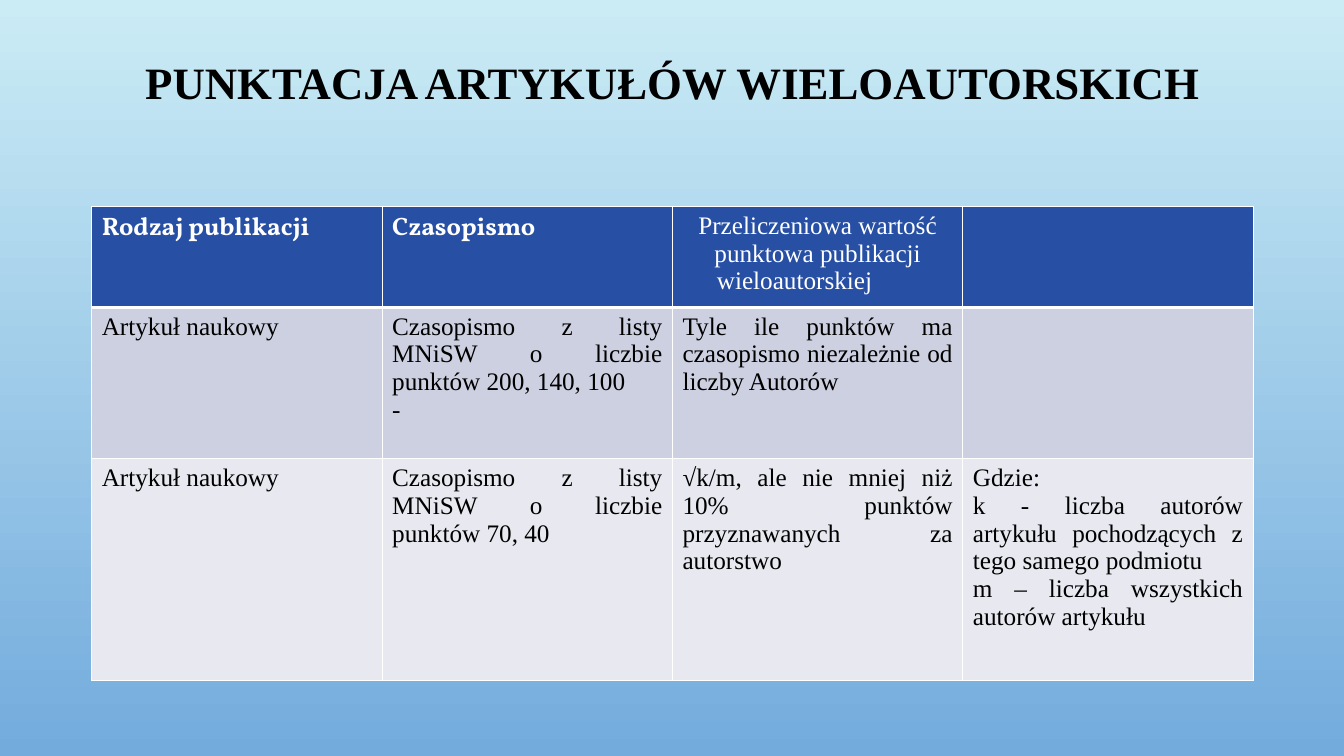
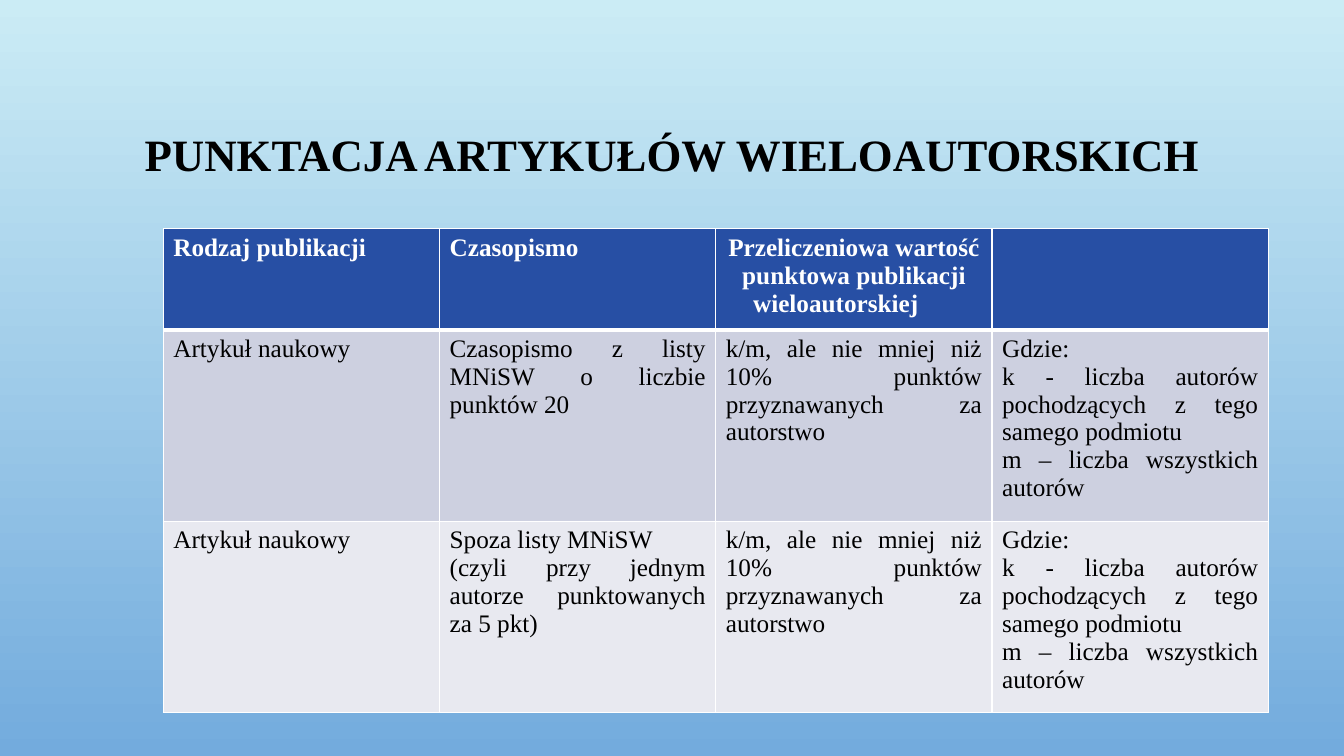
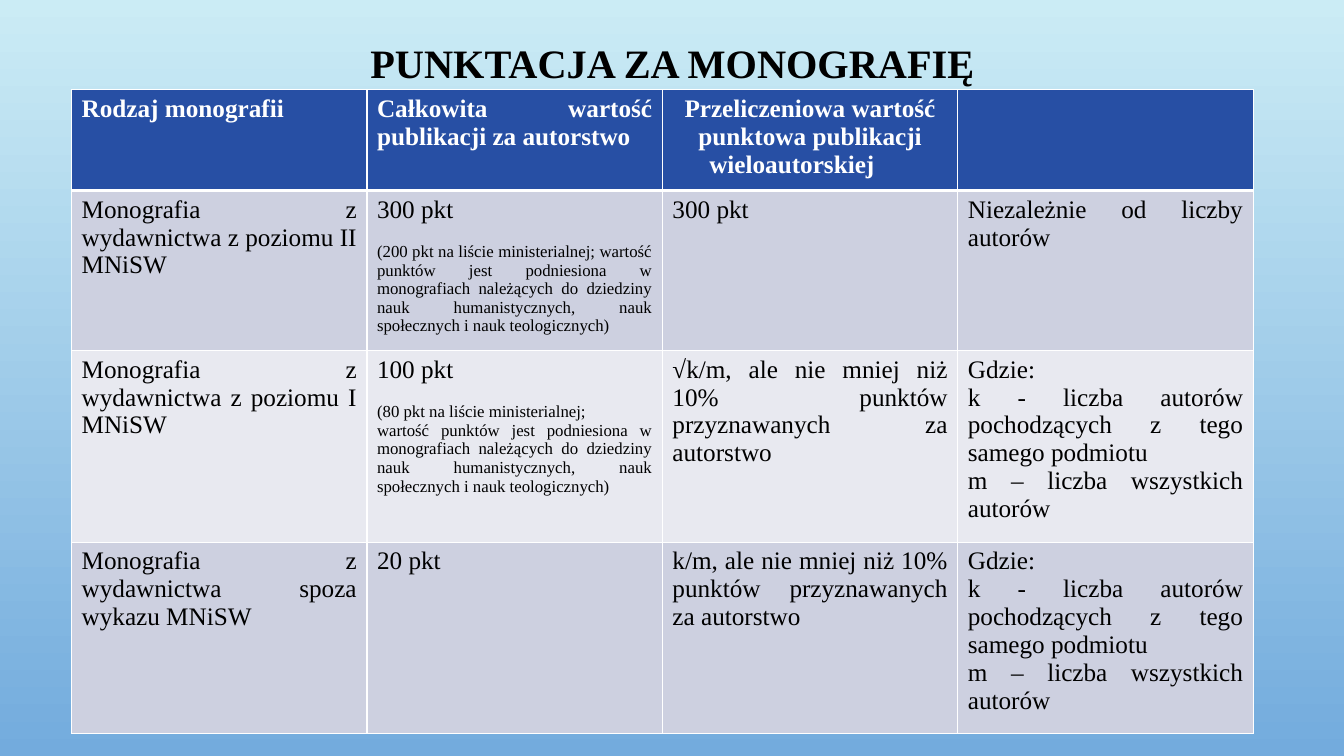
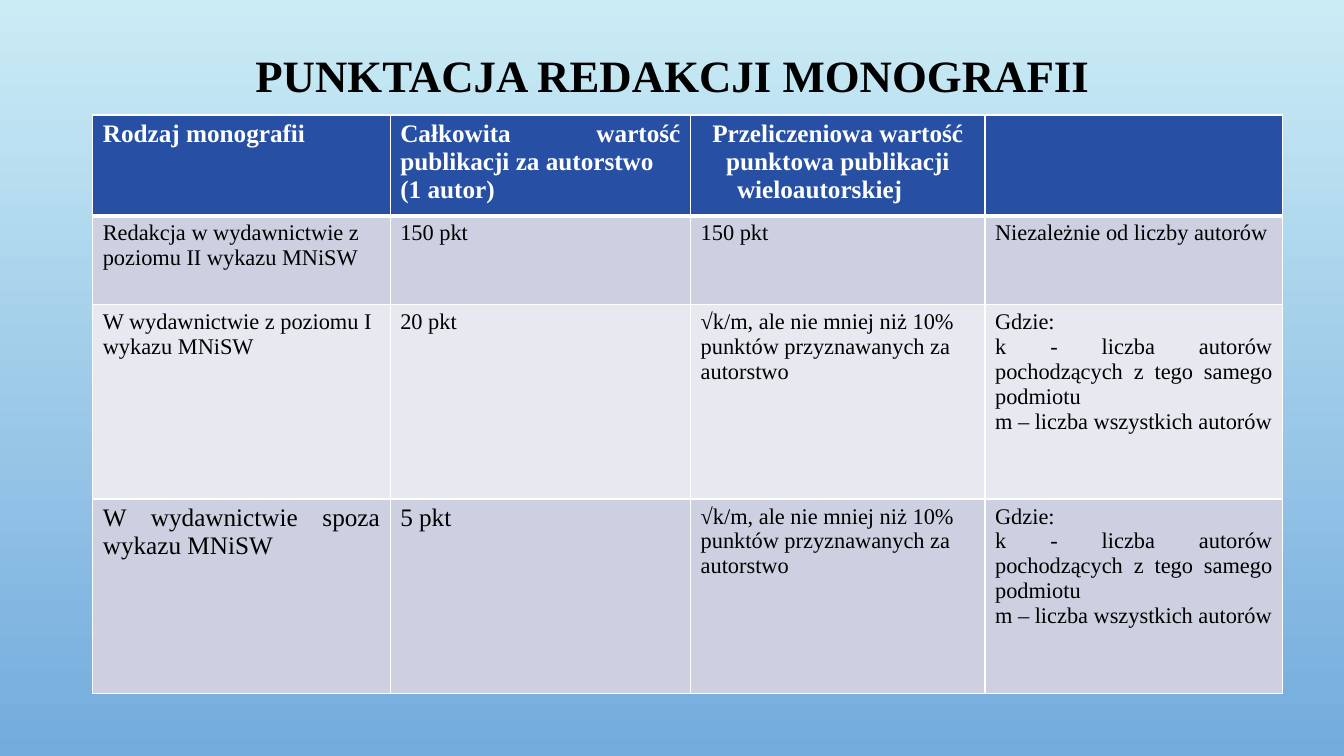
from dataclasses import dataclass

from lxml.etree import SubElement
from pptx import Presentation
from pptx.dml.color import RGBColor
from pptx.enum.text import MSO_ANCHOR, PP_ALIGN
from pptx.oxml.ns import qn
from pptx.util import Inches, Pt

SERIF = "Times New Roman"
BLACK, WHITE = "000000", "FFFFFF"
SKY_TOP, SKY_BOTTOM = "CBECF5", "73ABDD"
HEADER_FILL = "274FA4"
BAND_FILLS = ("CDD0E0", "E8E9F0")
LEFT, CENTER, JUSTIFY = PP_ALIGN.LEFT, PP_ALIGN.CENTER, PP_ALIGN.JUSTIFY


def color(value):
    return RGBColor.from_string(value)


@dataclass
class Line:
    text: str
    size: float = 18
    align: PP_ALIGN = JUSTIFY
    font: str = SERIF
    bold: bool = False
    color: str = BLACK
    gap: float = 0


def header(text, **style):
    return Line(text, **{"bold": True, "color": WHITE, **style})


def small(text):
    return [Line(text, size=16, align=LEFT)]


def legend(article="", whole="", size=18):
    return [
        Line("Gdzie:", size),
        Line(f"k - liczba autorów {article}pochodzących z tego samego podmiotu", size),
        Line(f"m – liczba wszystkich autorów{whole}", size),
    ]


def converted(**style):
    text = "Przeliczeniowa wartość punktowa publikacji wieloautorskiej \t"
    return [header(text, align=CENTER, **style)]


class Deck:
    """Builds slides that share one background, title style and table style."""

    def __init__(self):
        self.deck = Presentation()
        self.deck.slide_width = Inches(13.33)
        self.deck.slide_height = Inches(7.5)
        self.page = None

    def add_page(self):
        self.page = self.deck.slides.add_slide(self.deck.slide_layouts[6])
        fill = self.page.background.fill
        fill.gradient()
        fill.gradient_angle = 270
        for stop, shade, position in zip(fill.gradient_stops, (SKY_TOP, SKY_BOTTOM), (0, 1)):
            stop.color.rgb = color(shade)
            stop.position = position

    def add_lines(self, frame, lines):
        for index, line in enumerate(lines):
            para = frame.add_paragraph() if index else frame.paragraphs[0]
            para.alignment = line.align
            if line.gap:
                para.space_before = Pt(line.gap)
            span = para.add_run()
            span.text = line.text
            span.font.name = line.font
            span.font.size = Pt(line.size)
            span.font.bold = line.bold
            span.font.color.rgb = color(line.color)

    def add_title(self, text, area, size=32):
        box = self.page.shapes.add_textbox(*map(Inches, area))
        frame = box.text_frame
        frame.word_wrap = True
        frame.vertical_anchor = MSO_ANCHOR.MIDDLE
        self.add_lines(frame, [Line(text, size, CENTER, bold=True)])
        frame.paragraphs[0].line_spacing = 0.9

    def add_borders(self, cell, top, bottom):
        properties = cell._tc.get_or_add_tcPr()
        for side, width in (("L", 1), ("R", 1), ("T", top), ("B", bottom)):
            border = SubElement(properties, qn(f"a:ln{side}"), w=str(Pt(width)))
            fill = SubElement(border, qn("a:solidFill"))
            SubElement(fill, qn("a:srgbClr"), val=WHITE)

    def add_table(self, left, top, widths, heights, rows):
        table = self.page.shapes.add_table(
            len(heights), len(widths), Inches(left), Inches(top),
            Inches(sum(widths)), Inches(sum(heights)),
        ).table
        for column, width in zip(table.columns, widths):
            column.width = Inches(width)
        for number, (height, row) in enumerate(zip(heights, rows)):
            table.rows[number].height = Inches(height)
            fill = BAND_FILLS[(number - 1) % 2] if number else HEADER_FILL
            for position, lines in enumerate(row):
                cell = table.cell(number, position)
                self.add_borders(cell, 3 if number == 1 else 1, 1 if number else 3)
                cell.fill.solid()
                cell.fill.fore_color.rgb = color(fill)
                self.add_lines(cell.text_frame, lines)

    def save(self):
        self.deck.save("out.pptx")


SHARE = "k/m, ale nie mniej niż 10% punktów przyznawanych za autorstwo"
ROOT_SHARE = "√" + SHARE
ARTICLES = "PUNKTACJA ARTYKUŁÓW WIELOAUTORSKICH"
ARTICLE = [Line("Artykuł naukowy")]
TOTAL = "Całkowita wartość publikacji za autorstwo"
RAISED = (
    "wartość punktów jest podniesiona w monografiach należących do dziedziny "
    "nauk humanistycznych, nauk społecznych i nauk teologicznych)"
)


def add_top_articles(deck):
    deck.add_page()
    deck.add_title(ARTICLES, (0.92, 0.4, 11.5, 0.89))
    deck.add_table(0.91, 2.05, [2.88] * 4, [0.81, 1.5, 2.2], [
        [
            [header("Rodzaj publikacji", font="Vollkorn")],
            [header("Czasopismo", font="Vollkorn")],
            converted(bold=False),
            [],
        ],
        [
            ARTICLE,
            [Line("Czasopismo z listy MNiSW o liczbie punktów 200, 140, 100"), Line("- ")],
            [Line("Tyle ile punktów ma czasopismo niezależnie od liczby Autorów")],
            [],
        ],
        [
            ARTICLE,
            [Line("Czasopismo z listy MNiSW o liczbie punktów 70, 40")],
            [Line(ROOT_SHARE)],
            legend("artykułu ", " artykułu"),
        ],
    ])


def add_other_articles(deck):
    deck.add_page()
    deck.add_title(ARTICLES, (1, 0.68, 11.33, 1.75))
    deck.add_table(1.62, 2.27, [2.74] * 4, [0.99, 1.89, 1.89], [
        [[header("Rodzaj publikacji")], [header("Czasopismo")], converted(), []],
        [
            ARTICLE,
            [Line("Czasopismo z listy MNiSW o liczbie punktów 20")],
            [Line(SHARE)],
            legend(),
        ],
        [
            ARTICLE,
            [
                Line("Spoza listy MNiSW"),
                Line("(czyli przy jednym autorze punktowanych za 5 pkt)"),
            ],
            [Line(SHARE)],
            legend(),
        ],
    ])


def add_monographs(deck):
    deck.add_page()
    deck.add_title("PUNKTACJA ZA MONOGRAFIĘ", (0.92, 0.4, 11.5, 0.49), 28.8)
    deck.add_table(0.71, 0.89, [2.93] * 4, [0.99, 1.58, 1.88, 1.88], [
        [[header("Rodzaj monografii")], [header(TOTAL)], converted(), []],
        [
            [Line("Monografia z wydawnictwa z poziomu II MNiSW")],
            [
                Line("300 pkt"),
                Line("(200 pkt na liście ministerialnej; " + RAISED, 12, gap=13.5),
            ],
            [Line("300 pkt")],
            [Line("Niezależnie od liczby autorów")],
        ],
        [
            [Line("Monografia z wydawnictwa z poziomu I MNiSW")],
            [
                Line("100 pkt"),
                Line("(80 pkt na liście ministerialnej;", 12, gap=13.5),
                Line(RAISED, 12),
            ],
            [Line(ROOT_SHARE)],
            legend(),
        ],
        [
            [Line("Monografia z wydawnictwa spoza wykazu MNiSW")],
            [Line("20 pkt")],
            [Line(SHARE)],
            legend(),
        ],
    ])


def add_editing(deck):
    deck.add_page()
    deck.add_title("PUNKTACJA REDAKCJI MONOGRAFII", (0.92, 0.4, 11.5, 0.75))
    deck.add_table(0.92, 1.14, [2.95, 2.98, 2.92, 2.95], [0.88, 0.88, 1.93, 1.93], [
        [
            [header("Rodzaj monografii")],
            [header(TOTAL), header("(1 autor)")],
            converted(),
            [],
        ],
        [
            small("Redakcja w wydawnictwie z poziomu II wykazu MNiSW"),
            small("150 pkt"),
            small("150 pkt"),
            small("Niezależnie od liczby autorów"),
        ],
        [
            small("W wydawnictwie z poziomu I wykazu MNiSW"),
            small("20 pkt"),
            small(ROOT_SHARE),
            legend(size=16),
        ],
        [
            [Line("W wydawnictwie spoza wykazu MNiSW")],
            [Line("5 pkt")],
            small(ROOT_SHARE),
            legend(size=16),
        ],
    ])


def main():
    deck = Deck()
    add_top_articles(deck)
    add_other_articles(deck)
    add_monographs(deck)
    add_editing(deck)
    deck.save()


if __name__ == "__main__":
    main()
